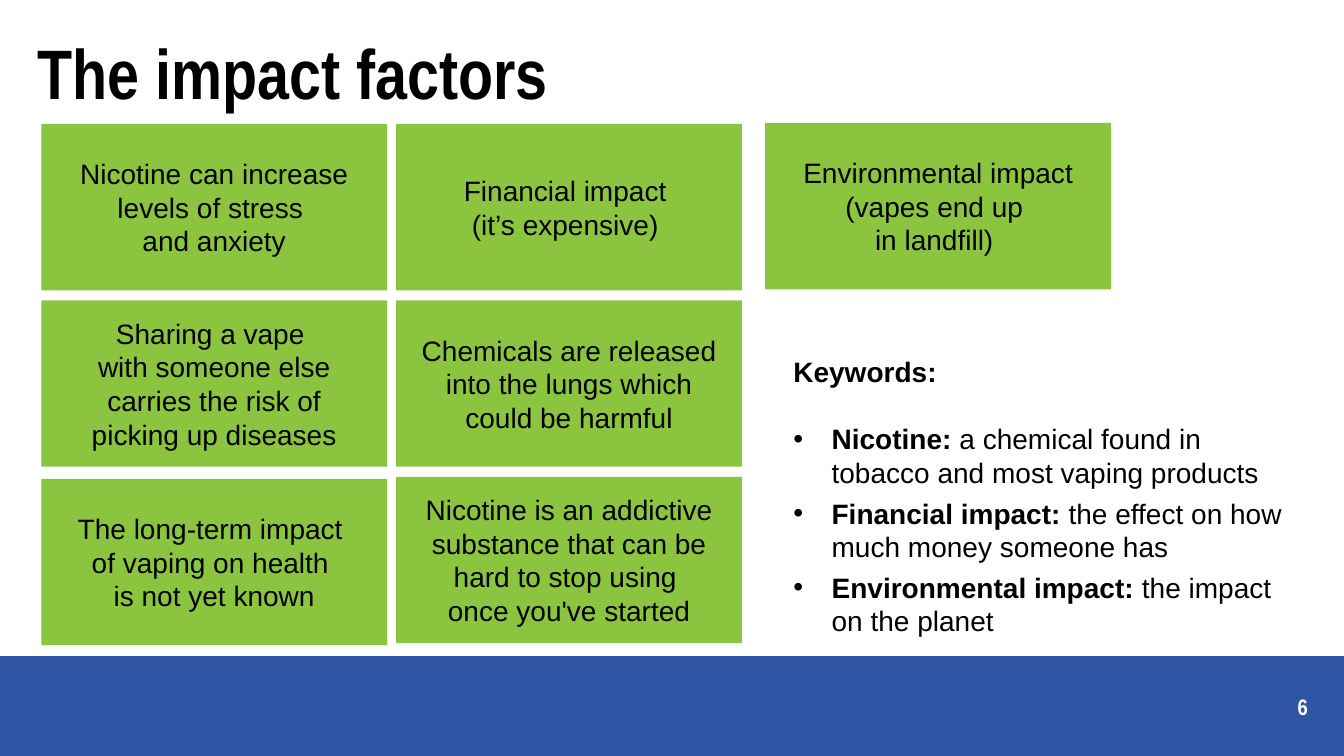
from dataclasses import dataclass

from lxml.etree import SubElement
from pptx import Presentation
from pptx.dml.color import RGBColor
from pptx.enum.shapes import MSO_SHAPE as Preset
from pptx.enum.text import MSO_ANCHOR as Anchor, PP_ALIGN as Align
from pptx.oxml.ns import qn
from pptx.util import Inches, Pt


@dataclass(frozen=True)
class Theme:
    card: RGBColor = RGBColor(0x8B, 0xC5, 0x3F)
    footer: RGBColor = RGBColor(0x31, 0x55, 0xA5)
    ink: RGBColor = RGBColor(0, 0, 0)
    paper: RGBColor = RGBColor(0xFF, 0xFF, 0xFF)
    heading_font: str = "Arial Narrow"
    body_font: str = "Arial"
    title_size: int = 50
    body_size: int = 20
    number_size: int = 16


@dataclass(frozen=True)
class Grid:
    """Card grid, in inches."""
    left: float = 0.41
    top: float = 1.23
    card_width: float = 3.43
    card_height: float = 1.65
    column_pitch: float = 3.52
    row_pitch: float = 1.75


@dataclass(frozen=True)
class Card:
    column: int
    row: int
    text: str
    shift_x: float = 0
    shift_y: float = 0


@dataclass(frozen=True)
class Keyword:
    term: str
    meaning: str


THEME = Theme()
GRID = Grid()
SLIDE_WIDTH, SLIDE_HEIGHT = 13.33, 7.5
FOOTER_TOP, FOOTER_HEIGHT = 6.51, 0.99

CARDS = [
    Card(0, 0, "Nicotine can increase levels of stress \nand anxiety"),
    Card(1, 0, "Financial impact \n(it’s expensive) "),
    Card(2, 0, "Environmental impact (vapes end up \nin landfill) ", 0.14, -0.01),
    Card(0, 1, "Sharing a vape \nwith someone else carries the risk of picking up diseases"),
    Card(1, 1, "Chemicals are released into the lungs which could be harmful"),
    Card(0, 2, "The long-term impact \nof vaping on health \nis not yet known", 0, 0.02),
    Card(1, 2, "Nicotine is an addictive substance that can be hard to stop using "
               "\nonce you've started"),
]
KEYWORDS = [
    Keyword("Nicotine:", " a chemical found in tobacco and most vaping products"),
    Keyword("Financial impact:", " the effect on how much money someone has"),
    Keyword("Environmental impact:", " the impact on the planet"),
]


def style(paragraph, size: int, font: str = THEME.body_font,
          color: RGBColor = THEME.ink, bold: bool | None = None) -> None:
    paragraph.font.size = Pt(size)
    paragraph.font.name = font
    paragraph.font.color.rgb = color
    paragraph.font.bold = bold


def set_insets(frame, inset: float) -> None:
    frame.margin_left = frame.margin_right = Inches(inset)
    frame.margin_top = frame.margin_bottom = Inches(inset)


def add_block(slide, left: float, top: float, width: float, height: float, color: RGBColor):
    block = slide.shapes.add_shape(
        Preset.RECTANGLE, Inches(left), Inches(top), Inches(width), Inches(height))
    block.shadow.inherit = False
    block.fill.solid()
    block.fill.fore_color.rgb = color
    block.line.fill.background()
    return block


def add_frame(slide, left: float, top: float, width: float, height: float):
    frame = slide.shapes.add_textbox(
        Inches(left), Inches(top), Inches(width), Inches(height)).text_frame
    frame.word_wrap = True
    return frame


def add_footer(slide, number: str) -> None:
    add_block(slide, 0, FOOTER_TOP, SLIDE_WIDTH, FOOTER_HEIGHT, THEME.footer)
    frame = add_frame(slide, 9.97, FOOTER_TOP, 3, FOOTER_HEIGHT)
    set_insets(frame, 0)
    frame.vertical_anchor = Anchor.MIDDLE
    page = frame.paragraphs[0]
    page.text = number
    page.alignment = Align.RIGHT
    style(page, THEME.number_size, THEME.heading_font, THEME.paper, True)


def add_title(slide, text: str) -> None:
    frame = add_frame(slide, 0.37, 0.39, 11.5, 0.79)
    set_insets(frame, 0)
    title = frame.paragraphs[0]
    title.text = text
    title.line_spacing = 0.9
    style(title, THEME.title_size, THEME.heading_font, bold=True)


def add_card(slide, card: Card) -> None:
    block = add_block(
        slide,
        GRID.left + card.column * GRID.column_pitch + card.shift_x,
        GRID.top + card.row * GRID.row_pitch + card.shift_y,
        GRID.card_width, GRID.card_height, THEME.card)
    frame = block.text_frame
    frame.word_wrap = True
    frame.vertical_anchor = Anchor.MIDDLE
    set_insets(frame, 0.24)
    factor = frame.paragraphs[0]
    factor.text = card.text
    factor.alignment = Align.CENTER
    style(factor, THEME.body_size)


def add_bullet(paragraph, indent: float) -> None:
    properties = paragraph._p.get_or_add_pPr()
    properties.set("marL", str(Inches(indent)))
    properties.set("indent", str(-Inches(indent)))
    SubElement(properties, qn("a:buFont"), typeface=THEME.body_font)
    SubElement(properties, qn("a:buChar"), char="•")


def add_keywords(slide, keywords: list[Keyword]) -> None:
    frame = add_frame(slide, 7.77, 3.47, 5.23, 2.93)
    heading = frame.paragraphs[0]
    heading.text = "Keywords:"
    heading.space_after = Pt(24)
    style(heading, THEME.body_size, bold=True)
    for keyword in keywords:
        entry = frame.add_paragraph()
        entry.space_after = Pt(5)
        add_bullet(entry, 0.38)
        style(entry, THEME.body_size)
        term = entry.add_run()
        term.text = keyword.term
        term.font.bold = True
        entry.add_run().text = keyword.meaning


def main() -> None:
    deck = Presentation()
    deck.slide_width, deck.slide_height = Inches(SLIDE_WIDTH), Inches(SLIDE_HEIGHT)
    slide = deck.slides.add_slide(deck.slide_layouts[6])
    add_footer(slide, "6")
    add_title(slide, "The impact factors")
    for card in CARDS:
        add_card(slide, card)
    add_keywords(slide, KEYWORDS)
    deck.save("out.pptx")


if __name__ == "__main__":
    main()
